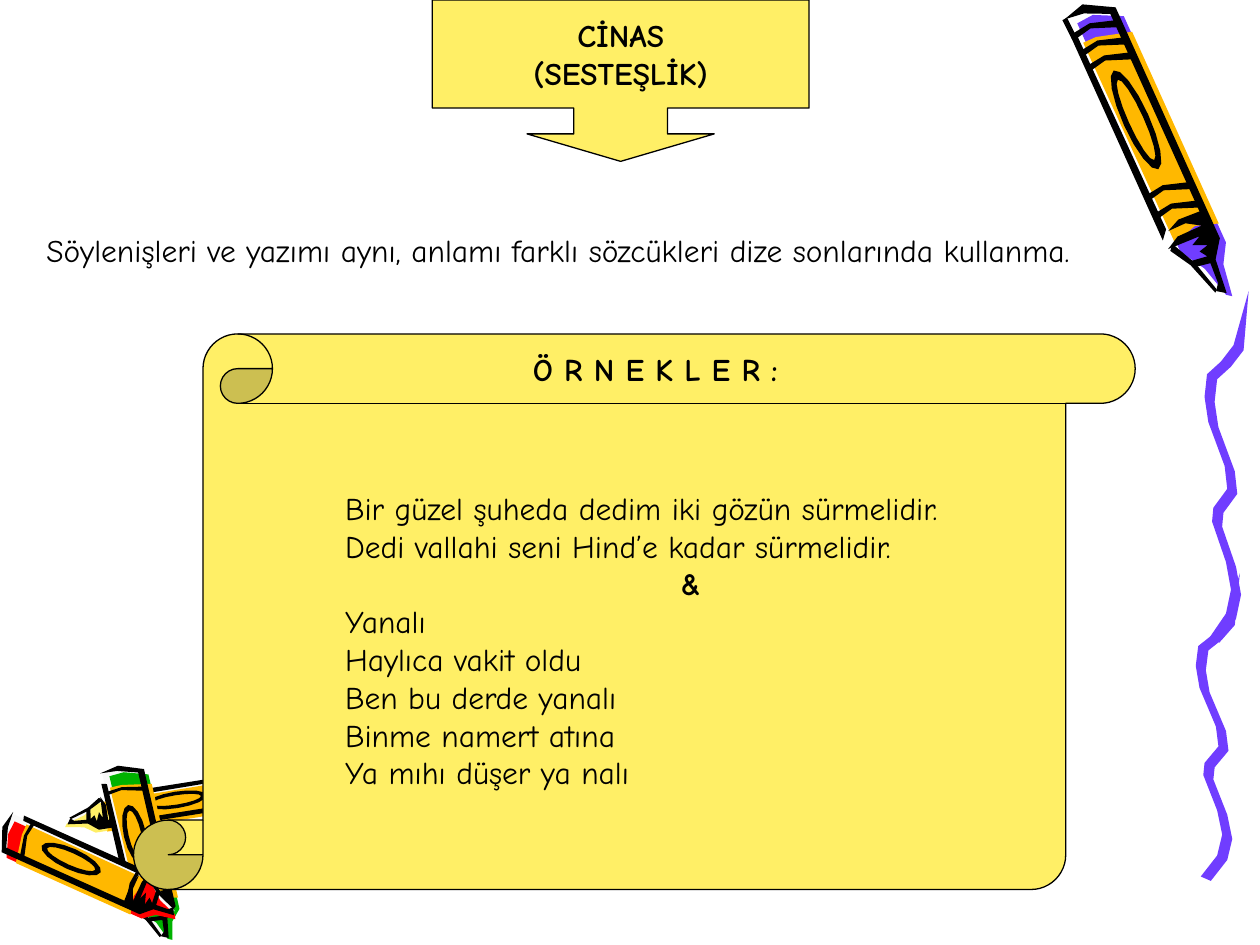
"""Build the slide on cinas, with crayons in the margins and examples on a scroll."""
from math import cos, pi, radians, sin
from lxml.etree import SubElement
from pptx import Presentation
from pptx.dml.color import RGBColor
from pptx.enum.shapes import MSO_CONNECTOR, MSO_SHAPE
from pptx.enum.text import MSO_ANCHOR, PP_ALIGN
from pptx.oxml.ns import qn
from pptx.util import Pt

FONT = "Comic Neue"
FINE = 100
HUES = {
    "black": "000000", "white": "F8F8F8", "violet": "703DFF", "orange": "FFB800",
    "yellow": "FFEF66", "red": "FF0000", "green": "00B200",
}
SHELL = [(-9, 0), (-5, -17), (188, -18), (243, 5), (205, 20), (2, 19)]
WAX = [(0, -11), (199, -11), (219, 1), (245, 8), (248, 12), (222, 16), (207, 25), (10, 25),
       (-1, 3)]
WRAP = [(191, -12), (185, 8), (191, 26), (24, 26), (16, -2), (16, -13)]
SIDE = [(8, -20), (185, -20), (178, -14), (10, -15)]
POINT = [(195, -18), (212, -8), (240, 1), (238, 3), (212, -4), (191, -14)]
TEETH = [(234, 6), (217, 7), (215, -4), (209, -7), (211, 7), (205, 3), (203, 11), (198, 0),
         (194, 8)]
COLLAR = [(193, -19), (187, -8), (187, 13), (180, 2), (180, -13), (175, -2), (176, 16)]
FRAME = COLLAR + [(4, 16), (-5, -3), (-7, -19), (-12, -1), (1, 22), (202, 22), (216, 12),
                  (244, 9), (239, 2)] + TEETH
BAND = [(2, -18), (-1, -3), (7, 17), (1, 17), (-5, -2), (-3, -18)]
BENDS = [(27, 45), (17, 58), (6, 68), (4, 86), (7, 106), (20, 141), (22, 159), (11, 174),
         (10, 185), (21, 217), (25, 239), (21, 258), (8, 277)]
PILE = [
    dict(wax="yellow", start=(136.8, 451.4), angle=171, long=0.41, wide=0.45),
    dict(wax="green", start=(69.1, 442.1), angle=77, long=0.4, wide=0.61),
    dict(wax="red", start=(5.8, 475.2), angle=24.2, long=0.43, wide=-0.58),
]
POEM = [
    "Bir güzel şuheda dedim iki gözün sürmelidir.",
    "Dedi vallahi seni Hind’e kadar sürmelidir.",
    "&",
    "Yanalı",
    "Haylıca vakit oldu",
    "Ben bu derde yanalı",
    "Binme namert atına",
    "Ya mıhı düşer ya nalı",
]


def hue(name):
    """Return the colour of that name."""
    return RGBColor.from_string(HUES[name])


def shade(shape, name):
    """Give a shape a plain fill and no shadow."""
    shape.shadow.inherit = False
    shape.fill.solid()
    shape.fill.fore_color.rgb = hue(name)


def patch(shapes, dots, name):
    """Draw a filled outline through dots given in points."""
    first, *rest = [(x * FINE, y * FINE) for x, y in dots]
    pen = shapes.build_freeform(*first, scale=Pt(1) / FINE)
    pen.add_line_segments(rest, close=True)
    form = pen.convert_to_shape()
    shade(form, name)
    form.line.fill.background()


def oval(mid, long, wide, turn=1):
    """Return dots round an oval on the crayon's axis."""
    steps = [turn * 2 * pi * step / 16 for step in range(17)]
    return [(mid + long * cos(step), wide * sin(step)) for step in steps]


def crayon(shapes, wax, start, angle, long, wide, bands, lined=False):
    """Draw a crayon from its blunt end, with scales along and across its axis."""
    run, rise = cos(radians(angle)), sin(radians(angle))

    def place(dots):
        """Turn dots on the crayon into dots on the slide."""
        return [(start[0] + u * long * run + v * wide * rise,
                 start[1] + u * long * rise - v * wide * run) for u, v in dots]

    ring = oval(89, 43, 10.5) + oval(89, 35, 6, turn=-1)
    rings = [[(u + at, v) for u, v in BAND] for at in bands]
    parts = [(SHELL, "white")] if lined else []
    parts += [(WAX, wax), (WRAP, "orange")]
    parts += [(dots, "black") for dots in (SIDE, POINT, FRAME, ring, *rings)]
    for dots, name in parts:
        patch(shapes, place(dots), name)


def trail(shapes, left, top, tall):
    """Draw the wavy violet mark as a slanted pen stroke along its bends."""
    def edge(sign):
        """Return one edge of the stroke."""
        return [(left + 0.72 * (x + sign * 4), top + tall * (y + sign * 2)) for x, y in BENDS]

    tip = (left + 0.72 * 35, top)
    patch(shapes, [tip] + edge(1) + edge(-1)[::-1], "violet")


def stroke(shapes, start, end, width):
    """Draw a black straight line."""
    line = shapes.add_connector(MSO_CONNECTOR.STRAIGHT, *map(Pt, start + end))
    line.line.width = Pt(width)
    line.line.color.rgb = hue("black")
    SubElement(line._element.spPr, qn("a:effectLst"))


def panel(slide, kind, box, adjust):
    """Add a yellow preset shape with a thin black line."""
    shape = slide.shapes.add_shape(kind, *map(Pt, box))
    for place, value in enumerate(adjust):
        shape.adjustments[place] = value
    shade(shape, "yellow")
    shape.line.color.rgb = hue("black")
    shape.line.width = Pt(0.75)
    return shape


def write(shape, lines, bold=(), align=PP_ALIGN.LEFT, anchor=MSO_ANCHOR.TOP, indent=None):
    """Fill a shape with lines, with bold and indent set by line number."""
    frame = shape.text_frame
    frame.word_wrap = True
    frame.vertical_anchor = anchor
    for row, text in enumerate(lines):
        para = frame.paragraphs[0] if row == 0 else frame.add_paragraph()
        para.alignment = align
        if indent and row in indent:
            para._p.get_or_add_pPr().set("marL", str(Pt(indent[row])))
        run = para.add_run()
        run.text = text
        run.font.name = FONT
        run.font.size = Pt(18)
        run.font.bold = row in bold
        run.font.color.rgb = hue("black")


def label(slide, box, lines, **style):
    """Add a text box with the given lines."""
    write(slide.shapes.add_textbox(*map(Pt, box)), lines, **style)


def margin(slide):
    """Draw the pile of crayons, the wavy mark and the large crayon."""
    heap = slide.shapes.add_group_shape().shapes
    for kind in PILE:
        crayon(heap, bands=(24, 178), lined=True, **kind)
    wave = slide.shapes.add_group_shape().shapes
    trail(wave, left=683.3, top=327.6, tall=0.63)
    trail(wave, left=688.3, top=166.3, tall=0.72)
    large = slide.shapes.add_group_shape().shapes
    crayon(large, wax="violet", start=(622.8, 10.1), angle=65.7, long=0.72, wide=0.72,
           bands=(9, 24, 37, 150, 166))
    stroke(large, (608.4, 10.8), (614.2, 22.3), 3)


def main():
    """Build and save the slide."""
    deck = Presentation()
    deck.slide_width, deck.slide_height = Pt(720), Pt(540)
    slide = deck.slides.add_slide(deck.slide_layouts[6])
    margin(slide)
    title = panel(slide, MSO_SHAPE.DOWN_ARROW_CALLOUT, (247, 0, 215.3, 92.2),
                  (0.58, 0.58, 0.17, 0.67))
    write(title, ["CİNAS", "(SESTEŞLİK)"], bold=(0, 1),
          align=PP_ALIGN.CENTER, anchor=MSO_ANCHOR.MIDDLE)
    label(slide, (19.4, 128.2, 647.3, 28.8),
          ["Söylenişleri ve yazımı aynı, anlamı farklı sözcükleri dize sonlarında kullanma."])
    panel(slide, MSO_SHAPE.VERTICAL_SCROLL, (76.3, 190.8, 572.4, 317.5), (0.125,))
    label(slide, (297.4, 196.6, 179.3, 28.8), ["Ö R N E K L E R :"], bold=(0,))
    label(slide, (190.1, 275.8, 379.4, 180), POEM, bold=(2,), indent={2: 192})
    deck.save("out.pptx")


if __name__ == "__main__":
    main()
